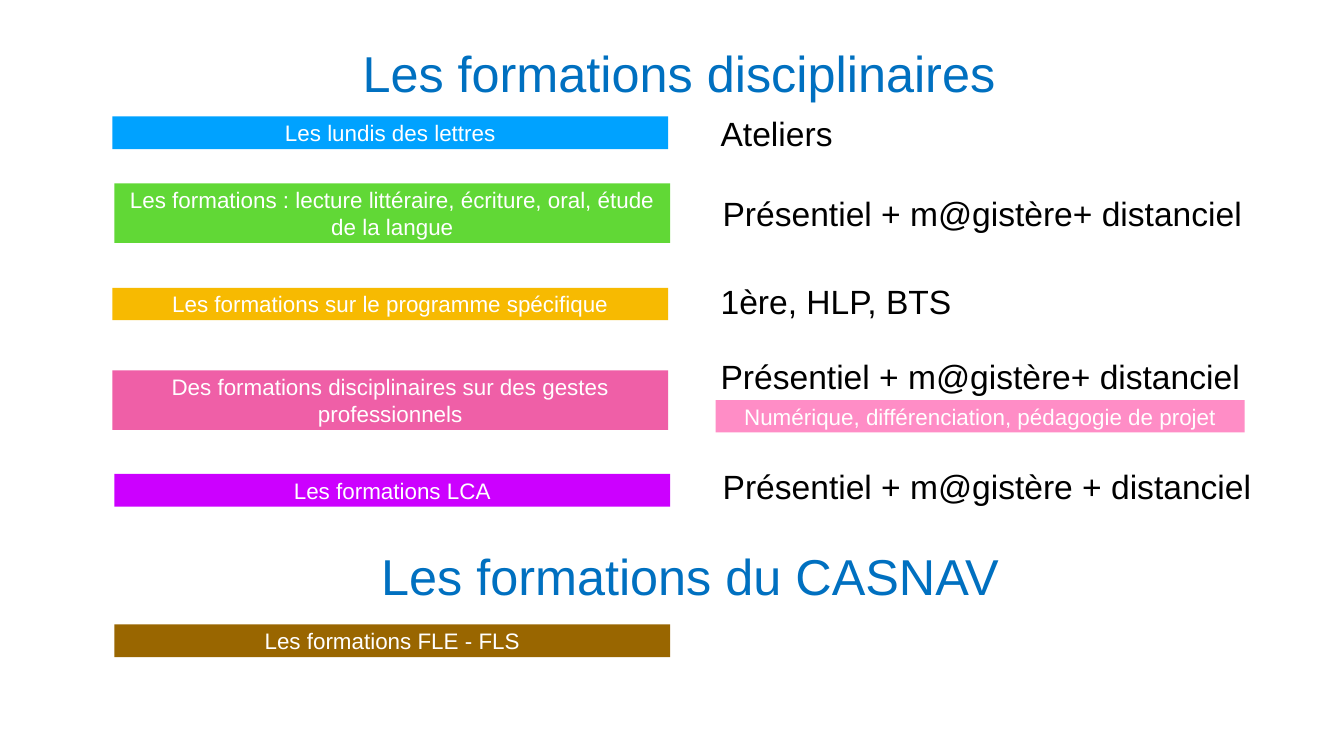
from pptx import Presentation
from pptx.dml.color import RGBColor
from pptx.enum.shapes import MSO_SHAPE as Shape
from pptx.enum.text import MSO_ANCHOR as Anchor, MSO_AUTO_SIZE as Fit, PP_ALIGN as Align
from pptx.util import Inches, Pt

WHITE = RGBColor(0xFF, 0xFF, 0xFF)
BLACK = RGBColor(0x00, 0x00, 0x00)
BLUE = RGBColor(0x00, 0x70, 0xC0)
SKY = RGBColor(0x00, 0xA2, 0xFF)
GREEN = RGBColor(0x61, 0xD8, 0x36)
GOLD = RGBColor(0xF7, 0xBA, 0x01)
PINK = RGBColor(0xEF, 0x5F, 0xA7)
ROSE = RGBColor(0xFF, 0x8D, 0xC6)
PURPLE = RGBColor(0xCC, 0x00, 0xFF)
BROWN = RGBColor(0x99, 0x66, 0x00)

LABEL_W = 11.03
NOTE_DX = 12.01
ONLINE = "Présentiel + m@gistère+ distanciel"

# left, top, height, colour, label, note, note top, note width, note height
ROWS = [
    (2.23, 2.31, 0.65, SKY, "Les lundis des lettres", "Ateliers", 2.19, 8.62, 0.88),
    (2.27, 3.64, 1.18, GREEN,
     "Les formations : lecture littéraire, écriture, oral, étude de la langue",
     ONLINE, 3.77, 10.5, 0.92),
    (2.23, 5.71, 0.64, GOLD, "Les formations sur le programme spécifique",
     "1ère, HLP, BTS", 5.53, 10.5, 0.88),
    (2.23, 7.35, 1.18, PINK,
     "Des formations disciplinaires sur des gestes professionnels",
     ONLINE, 7.01, 10.5, 0.92),
    (2.27, 9.4, 0.65, PURPLE, "Les formations LCA",
     "Présentiel + m@gistère + distanciel", 9.18, 11.31, 0.92),
]


def write(shape, text, size=32, color=WHITE, align=Align.CENTER):
    frame = shape.text_frame
    frame.word_wrap = True
    frame.auto_size = Fit.NONE
    frame.vertical_anchor = Anchor.MIDDLE
    frame.margin_left = frame.margin_right = Inches(0.06)
    frame.margin_top = frame.margin_bottom = Inches(0.06)
    para = frame.paragraphs[0]
    para.alignment = align
    run = para.add_run()
    run.text = text
    run.font.name = "Arial"
    run.font.size = Pt(size)
    run.font.color.rgb = color


def add_bar(slide, box, text, fill):
    bar = slide.shapes.add_shape(Shape.RECTANGLE, *map(Inches, box))
    bar.shadow.inherit = False
    bar.fill.solid()
    bar.fill.fore_color.rgb = fill
    bar.line.fill.background()
    write(bar, text)


def add_text(slide, box, text, **style):
    write(slide.shapes.add_textbox(*map(Inches, box)), text, **style)


def set_title(slide, box, text):
    title = slide.shapes.title
    title.left, title.top, title.width, title.height = map(Inches, box)
    write(title, text, size=72, color=BLUE)


def add_row(slide, row):
    """Coloured label on the left, its note on the right."""
    left, top, height, fill, label, note, note_top, note_w, note_h = row
    add_bar(slide, (left, top, LABEL_W, height), label, fill)
    add_text(slide, (left + NOTE_DX, note_top, note_w, note_h), note,
             size=48, color=BLACK, align=Align.LEFT)


def main():
    deck = Presentation()
    deck.slide_width, deck.slide_height = Inches(26.67), Inches(15)
    slide = deck.slides.add_slide(deck.slide_layouts[5])

    set_title(slide, (2.23, 10.54, 22.93, 1.74), "Les formations du CASNAV")
    for row in ROWS:
        add_row(slide, row)
    add_bar(slide, (14.2, 7.94, 10.5, 0.64),
            "Numérique, différenciation, pédagogie de projet", ROSE)
    add_bar(slide, (2.27, 12.39, LABEL_W, 0.65), "Les formations FLE - FLS", BROWN)
    add_text(slide, (2.01, 0.56, 22.93, 1.74), "Les formations disciplinaires",
             size=72, color=BLUE)
    deck.save("out.pptx")


if __name__ == "__main__":
    main()
